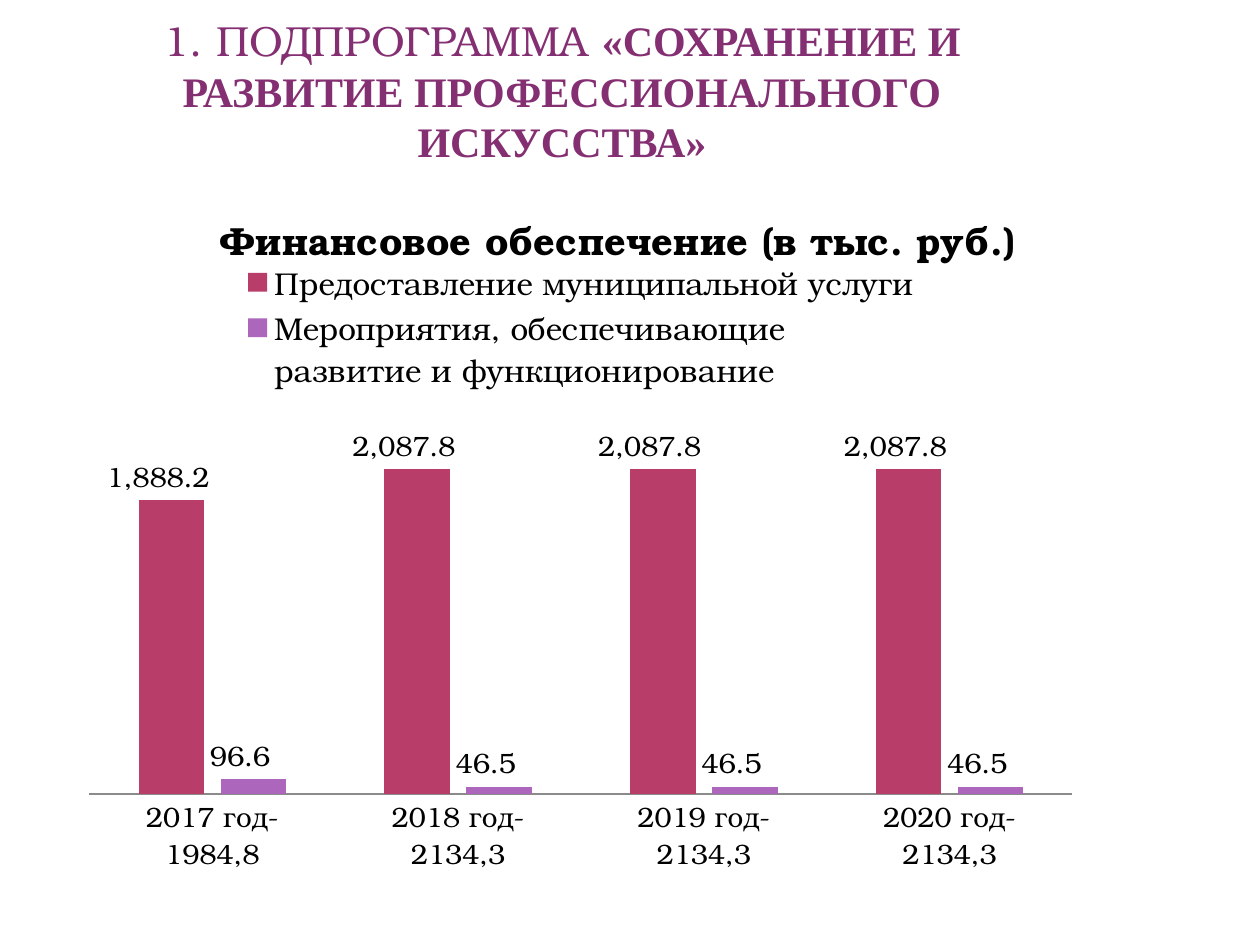
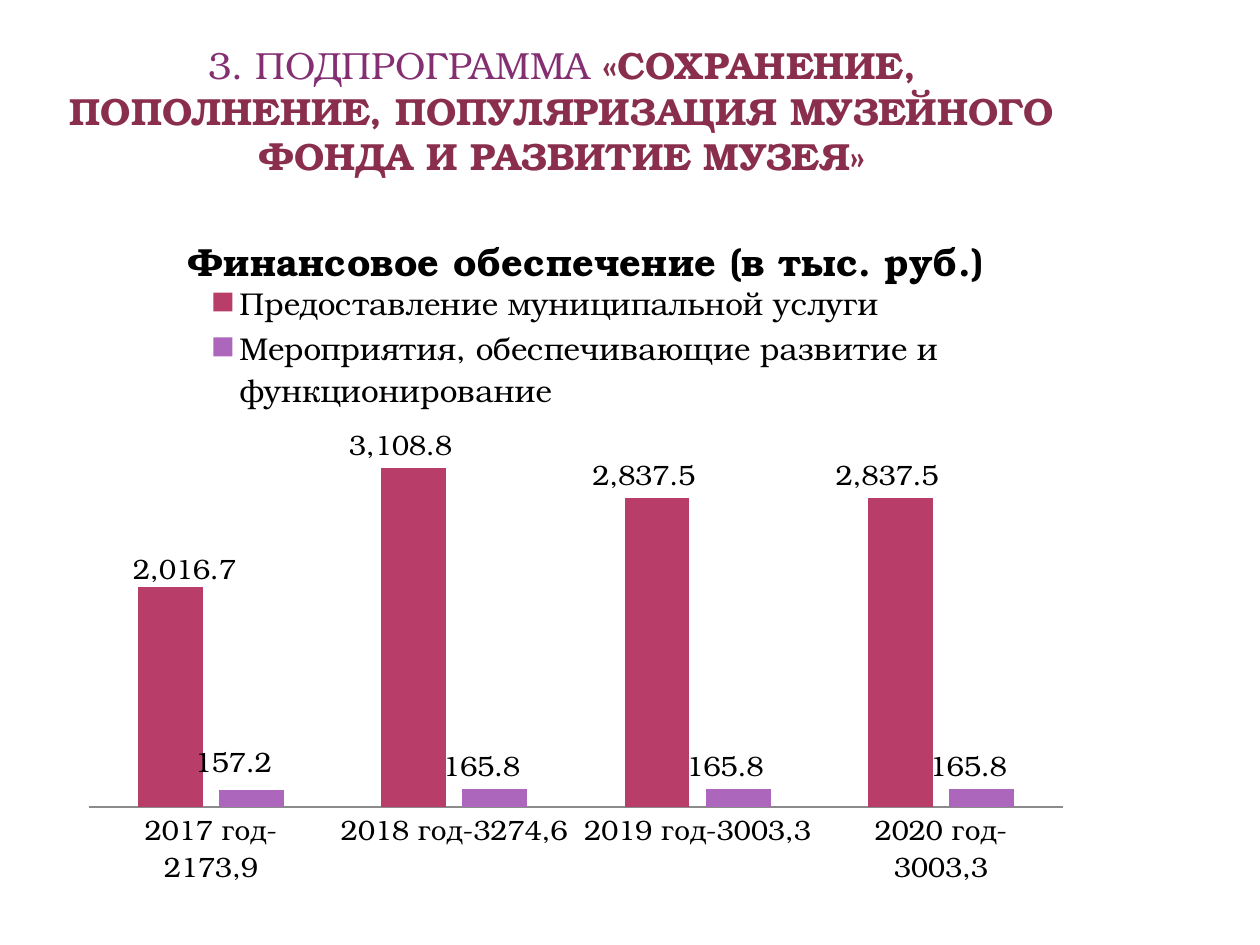
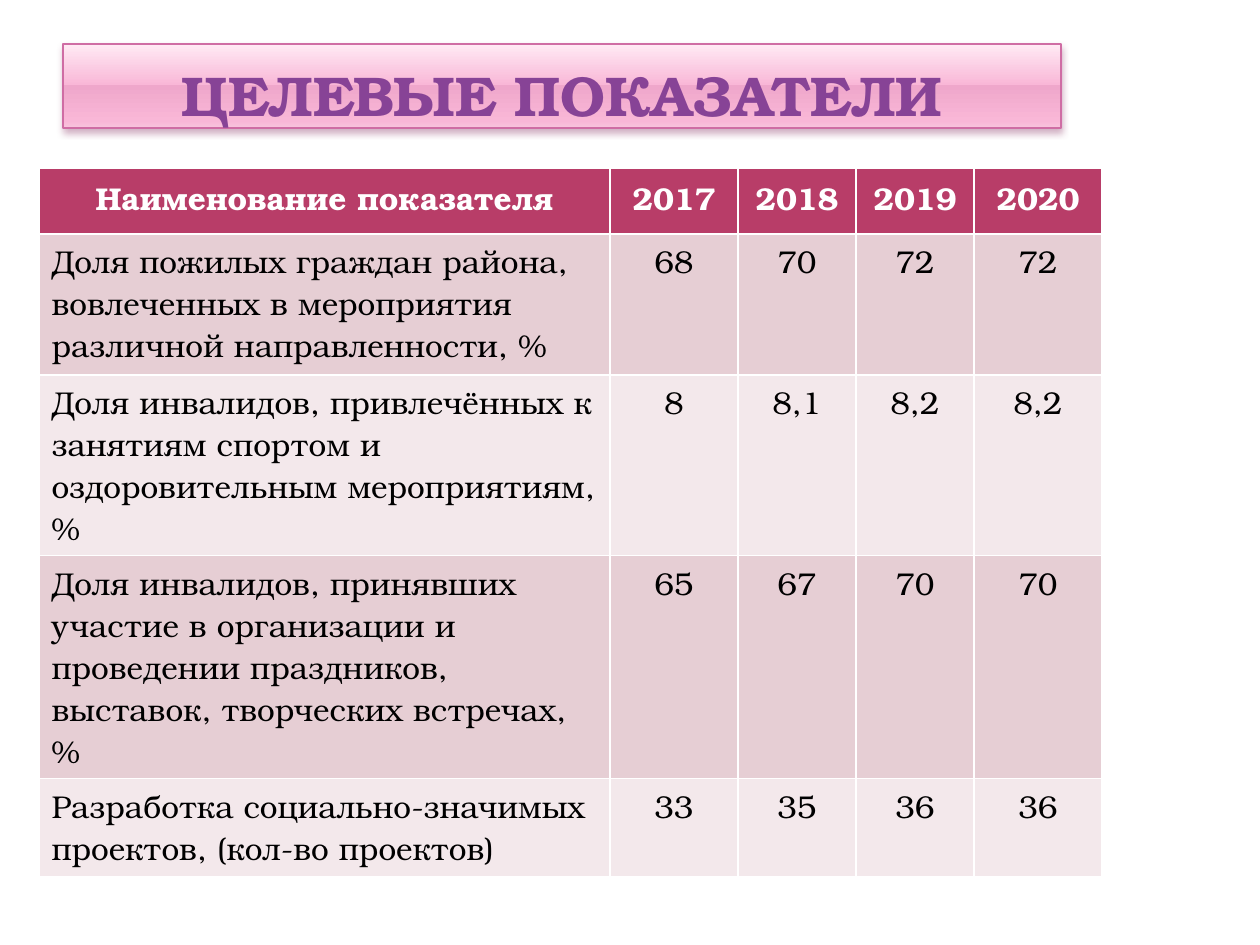
from lxml.etree import SubElement
from pptx import Presentation
from pptx.chart.data import CategoryChartData
from pptx.dml.color import RGBColor
from pptx.enum.chart import XL_CHART_TYPE, XL_LABEL_POSITION, XL_LEGEND_POSITION, XL_TICK_MARK
from pptx.enum.text import MSO_ANCHOR, MSO_AUTO_SIZE, PP_ALIGN
from pptx.oxml import parse_xml
from pptx.oxml.ns import nsdecls, qn
from pptx.util import Pt

PX = 914400 / 126
BONUM = "TeX Gyre Bonum"
TIMES = "Times New Roman"
PURPLE, CRIMSON, LILAC, BERRY = "852F73", "B83D68", "AC66BB", "8A2E4E"
BLACK, WHITE, GREY = "000000", "FFFFFF", "8B8B8B"
NUMBER_FORMAT = "_-* #,##0.0\\ _₽_-;\\-* #,##0.0\\ _₽_-"
SERIES_NAMES = ["Предоставление муниципальной услуги",
                "Мероприятия, обеспечивающие развитие и функционирование"]


def format_font(font, color, **values):
    font.color.rgb = RGBColor.from_string(color)
    for name, value in values.items():
        setattr(font, name, value)


def set_layout(element, index, **values):
    for old_layout in element.findall(qn("c:layout")):
        element.remove(old_layout)
    layout = parse_xml(f"<c:layout {nsdecls('c')}><c:manualLayout/></c:layout>")
    for name, value in values.items():
        SubElement(layout[0], qn(f"c:{name}")).set("val", str(value))
    element.insert(index, layout)


presentation = Presentation()
presentation.slide_width = round(1260 * PX)
presentation.slide_height = round(945 * PX)

titles = [
    {"top": 29, "height": 137, "size": 24, "runs": [
        ("1. ПОДПРОГРАММА ", BONUM, PURPLE, False),
        ("«СОХРАНЕНИЕ И РАЗВИТИЕ ПРОФЕССИОНАЛЬНОГО ИСКУССТВА»", TIMES, PURPLE, True)]},
    {"top": 44, "height": 134, "size": 21.6, "runs": [
        ("3. ПОДПРОГРАММА ", BONUM, PURPLE, False),
        ("«СОХРАНЕНИЕ, ПОПОЛНЕНИЕ, ПОПУЛЯРИЗАЦИЯ МУЗЕЙНОГО ФОНДА И РАЗВИТИЕ МУЗЕЯ»",
         BONUM, BERRY, True)]},
    {"top": 44, "height": 84, "size": 32, "runs": [
        ("ЦЕЛЕВЫЕ ПОКАЗАТЕЛИ", BONUM, "874396", True)]},
]
for title in titles:
    slide = presentation.slides.add_slide(presentation.slide_layouts[5])
    shape = slide.shapes.title
    box = {"left": 63, "top": title["top"], "width": 998, "height": title["height"]}
    for name, value in box.items():
        setattr(shape, name, round(value * PX))
    text_frame = shape.text_frame
    frame_format = {"margin_left": round(6 * PX), "margin_right": round(6 * PX),
                    "margin_top": 0, "margin_bottom": 0, "word_wrap": True,
                    "auto_size": MSO_AUTO_SIZE.NONE, "vertical_anchor": MSO_ANCHOR.BOTTOM}
    for name, value in frame_format.items():
        setattr(text_frame, name, value)
    paragraph = text_frame.paragraphs[0]
    paragraph.alignment = PP_ALIGN.CENTER
    for text, font_name, color, bold in title["runs"]:
        run = paragraph.add_run()
        run.text = text
        format_font(run.font, color, name=font_name, size=Pt(title["size"]), bold=bold)
        run.font._element.insert(0, parse_xml(
            f'<a:ln {nsdecls("a")} w="508"><a:solidFill><a:srgbClr val="5E1A50"/>'
            '</a:solidFill></a:ln>'))

finances = [
    {"width": 1024, "height": 718, "maximum": 2500,
     "categories": ["2017 год- 1984,8", "2018 год- 2134,3",
                    "2019 год- 2134,3", "2020 год- 2134,3"],
     "values": [(1888.2, 2087.8, 2087.8, 2087.8), (96.6, 46.5, 46.5, 46.5)],
     "title": {"x": 0.14, "y": 0.02},
     "legend": {"x": 0.17, "y": 0.1, "w": 0.66, "h": 0.19},
     "plot": {"x": 0.02, "y": 0.305, "w": 0.96, "h": 0.542},
     "label_shifts": []},
    {"width": 1014, "height": 709, "maximum": 3500,
     "categories": ["2017 год- 2173,9", "2018 год-3274,6",
                    "2019 год-3003,3", "2020 год- 3003,3"],
     "values": [(2016.7, 3108.8, 2837.5, 2837.5), (157.2, 165.8, 165.8, 165.8)],
     "title": {"x": 0.11, "y": 0.05},
     "legend": {"x": 0.13, "y": 0.13, "w": 0.74, "h": 0.19},
     "plot": {"x": 0.02, "y": 0.338, "w": 0.96, "h": 0.538},
     "label_shifts": [(0.027, 0.007), (-0.005, -0.006)]},
]
edge = {"xMode": "edge", "yMode": "edge"}
for slide, finance in zip(presentation.slides, finances):
    chart_data = CategoryChartData(number_format=NUMBER_FORMAT)
    chart_data.categories = finance["categories"]
    for name, values in zip(SERIES_NAMES, finance["values"]):
        chart_data.add_series(name, values)
    chart = slide.shapes.add_chart(
        XL_CHART_TYPE.COLUMN_CLUSTERED, round(69 * PX), round(186 * PX),
        round(finance["width"] * PX), round(finance["height"] * PX), chart_data).chart
    format_font(chart.font, BLACK, name=BONUM, size=Pt(18))

    chart.has_title = True
    paragraph = chart.chart_title.text_frame.paragraphs[0]
    run = paragraph.add_run()
    run.text = "Финансовое обеспечение (в тыс. руб.)"
    format_font(run.font, BLACK, name=BONUM, size=Pt(21.6), bold=True)
    set_layout(chart.chart_title._element, 1, **edge, **finance["title"])

    chart.has_legend = True
    chart.legend.position = XL_LEGEND_POSITION.TOP
    chart.legend.include_in_layout = False
    format_font(chart.legend.font, BLACK, name=BONUM, size=Pt(18))
    set_layout(chart.legend._element, 1, **edge, **finance["legend"])
    set_layout(chart._chartSpace.chart.plotArea, 0, layoutTarget="inner", **edge,
               **finance["plot"])

    value_axis = chart.value_axis
    axis_format = {"minimum_scale": 0, "maximum_scale": finance["maximum"],
                   "has_major_gridlines": False, "visible": False}
    for name, value in axis_format.items():
        setattr(value_axis, name, value)
    category_axis = chart.category_axis
    category_axis.major_tick_mark = XL_TICK_MARK.NONE
    category_axis.format.line.color.rgb = RGBColor.from_string(GREY)
    format_font(category_axis.tick_labels.font, BLACK, name=BONUM, size=Pt(16))

    plot = chart.plots[0]
    plot.gap_width, plot.overlap, plot.vary_by_categories = 150, -25, False
    for series, color in zip(plot.series, [CRIMSON, LILAC]):
        series.format.fill.solid()
        series.format.fill.fore_color.rgb = RGBColor.from_string(color)
        series.invert_if_negative = False
        label_format = {"show_value": True, "number_format": NUMBER_FORMAT,
                        "number_format_is_linked": False,
                        "position": XL_LABEL_POSITION.OUTSIDE_END}
        for name, value in label_format.items():
            setattr(series.data_labels, name, value)
        format_font(series.data_labels.font, BLACK, name=BONUM, size=Pt(16))
    for series, (x, y) in zip(plot.series, finance["label_shifts"]):
        label = series.points[0].data_label
        format_font(label.font, BLACK, name=BONUM, size=Pt(16))
        label.position = XL_LABEL_POSITION.OUTSIDE_END
        label_element = series.data_labels._element.find(qn("c:dLbl"))
        set_layout(label_element, 1, x=x, y=y)
        number_format = parse_xml(f'<c:numFmt {nsdecls("c")} sourceLinked="0"/>')
        number_format.set("formatCode", NUMBER_FORMAT)
        label_element.insert(2, number_format)

slide = presentation.slides[2]
banner = slide.shapes.title
banner.fill.gradient()
banner.fill.gradient_angle = 270
stops = banner._element.spPr.find(qn("a:gradFill")).find(qn("a:gsLst"))
for stop in list(stops):
    stops.remove(stop)
for position, color in [(0, "FFEAF4"), (49, "F9B7D7"), (49, "EFA7CB"),
                        (92, "F9B7D7"), (100, "F8C4DD")]:
    stop = SubElement(stops, qn("a:gs"), pos=str(position * 1000))
    SubElement(stop, qn("a:srgbClr"), val=color)
banner.line.color.rgb = RGBColor.from_string("CF6DA4")
banner.line.width = Pt(0.9)
banner._element.spPr.append(parse_xml(
    f'<a:effectLst {nsdecls("a")}><a:outerShdw blurRad="50800" dist="25400" dir="5400000">'
    '<a:srgbClr val="893263"><a:alpha val="38000"/></a:srgbClr></a:outerShdw></a:effectLst>'))

indicators = [
    ("Наименование показателя", "2017", "2018", "2019", "2020"),
    ("Доля пожилых граждан района, вовлеченных в мероприятия различной направленности, %",
     "68", "70", "72", "72"),
    ("Доля инвалидов, привлечённых к занятиям спортом и оздоровительным мероприятиям, %",
     "8", "8,1", "8,2", "8,2"),
    ("Доля инвалидов, принявших участие в организации и проведении праздников, "
     "выставок, творческих встречах, %", "65", "67", "70", "70"),
    ("Разработка социально-значимых проектов, (кол-во проектов)", "33", "35", "36", "36"),
]
column_widths = [571, 128, 118, 118, 128]
row_heights = [66, 141, 141, 184, 98]
row_fills = [CRIMSON, "E6CED4", "F3E8EB", "E6CED4", "F3E8EB"]
table = slide.shapes.add_table(
    len(row_heights), len(column_widths), round(39 * PX), round(168 * PX),
    round(sum(column_widths) * PX), round(sum(row_heights) * PX)).table
for column, width in zip(table.columns, column_widths):
    column.width = round(width * PX)
for row_index, (row, height) in enumerate(zip(table.rows, row_heights)):
    row.height = round(height * PX)
    is_header = row_index == 0
    for column_index, cell in enumerate(row.cells):
        cell.fill.solid()
        cell.fill.fore_color.rgb = RGBColor.from_string(row_fills[row_index])
        paragraph = cell.text_frame.paragraphs[0]
        if is_header or column_index > 0:
            paragraph.alignment = PP_ALIGN.CENTER
        run = paragraph.add_run()
        run.text = indicators[row_index][column_index]
        format_font(run.font, WHITE if is_header else BLACK,
                    name=BONUM, size=Pt(18), bold=is_header)

presentation.save("out.pptx")
